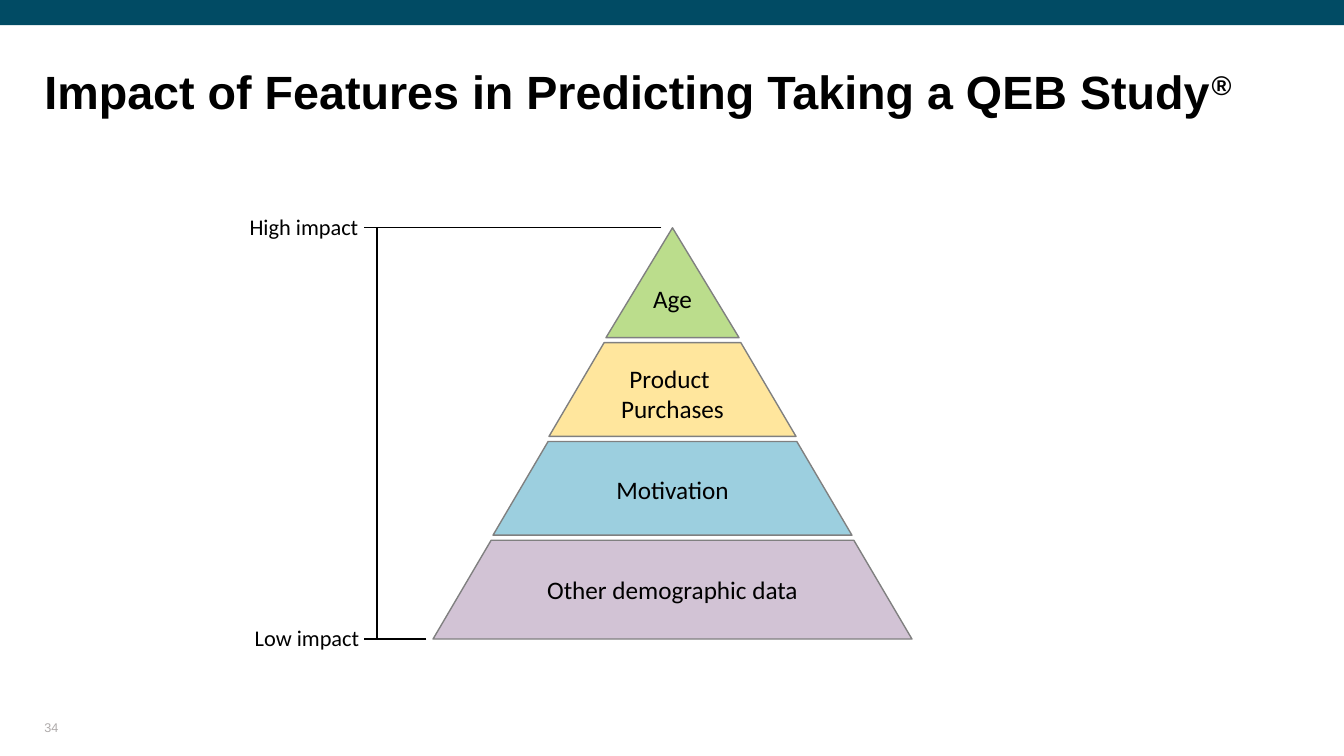
from dataclasses import dataclass

from lxml.etree import SubElement
from pptx import Presentation
from pptx.dml.color import RGBColor as Rgb
from pptx.enum.shapes import MSO_CONNECTOR as Link, MSO_SHAPE as Kind
from pptx.enum.text import MSO_ANCHOR as Anchor, MSO_AUTO_SIZE as Fit, PP_ALIGN as Align
from pptx.oxml.ns import qn
from pptx.util import Inches, Pt


@dataclass(frozen=True)
class Theme:
    head: str = "Arial"
    body: str = "Calibri"
    ink: str = "000000"
    edge: str = "808080"
    band: str = "014B64"
    mute: str = "AFABAB"
    green: str = "BBDD8C"
    gold: str = "FFE69D"
    blue: str = "9CCFDF"
    mauve: str = "D2C3D5"
    title: float = 33.3
    tier: int = 18
    label: int = 16
    page: int = 9
    rule: int = 1


class Deck:
    def __init__(self, theme):
        self.theme = theme
        self.file = Presentation()
        self.file.slide_width = Inches(13.33)
        self.file.slide_height = Inches(7.5)
        self.slide = self.file.slides.add_slide(self.file.slide_layouts[5])
        self.items = self.slide.shapes

    def style(self, run, size, face, color, bold=False):
        font = run.font
        font.size, font.name, font.bold = Pt(size), face, bold
        font.color.rgb = Rgb.from_string(color)

    def flush(self, frame):
        frame.margin_left = frame.margin_right = 0
        frame.margin_top = frame.margin_bottom = 0
        frame.vertical_anchor = Anchor.BOTTOM
        frame.word_wrap = True

    def shape(self, kind, box, fill, edge=None):
        item = self.items.add_shape(kind, *map(Inches, box))
        item.shadow.inherit = False
        item.fill.solid()
        item.fill.fore_color.rgb = Rgb.from_string(fill)
        if edge:
            item.line.color.rgb = Rgb.from_string(edge)
            item.line.width = Pt(self.theme.rule)
        else:
            item.line.fill.background()
        return item

    def text(self, words, box, size):
        frame = self.items.add_textbox(*map(Inches, box)).text_frame
        frame.word_wrap = True
        frame.auto_size = Fit.SHAPE_TO_FIT_TEXT
        frame.text = words
        for para in frame.paragraphs:
            para.alignment = Align.CENTER
            self.style(para.runs[0], size, self.theme.body, self.theme.ink)

    def line(self, *ends):
        item = self.items.add_connector(Link.STRAIGHT, *map(Inches, ends))
        item.line.color.rgb = Rgb.from_string(self.theme.ink)
        item.line.width = Pt(self.theme.rule)
        SubElement(item._element.spPr, qn("a:effectLst"))

    def title(self, words, mark, box):
        item = self.items.title
        item.left, item.top, item.width, item.height = map(Inches, box)
        frame = item.text_frame
        self.flush(frame)
        frame.auto_size = Fit.NONE
        para = frame.paragraphs[0]
        para.text = words
        para.alignment = Align.LEFT
        para.line_spacing = 0.9
        sign = para.add_run()
        sign.text = mark
        for run in para.runs:
            self.style(run, self.theme.title, self.theme.head, self.theme.ink, True)
        sign.font._element.set("baseline", "30000")

    def page(self, words, box):
        frame = self.items.add_textbox(*map(Inches, box)).text_frame
        self.flush(frame)
        frame.text = words
        para = frame.paragraphs[0]
        para.space_after = Pt(6)
        self.style(para.runs[0], self.theme.page, self.theme.head, self.theme.mute)


def main():
    theme = Theme()
    deck = Deck(theme)
    deck.shape(Kind.RECTANGLE, (0, 0, 13.33, 0.25), theme.band)
    deck.title("Impact of Features in Predicting Taking a QEB Study", "®",
               (0.44, 0.46, 12.82, 0.73))
    deck.page("34", (0.44, 7.05, 3, 0.24))

    mid, peak, base, gap = 6.67, 2.26, 6.34, 0.05
    tiers = [
        ("Age", 1.32, 1.09, theme.green, 2.76, 1.69, 0.4),
        ("Product \nPurchases", 2.45, 0.93, theme.gold, 3.55, 3.66, 0.71),
        ("Motivation", 3.56, 0.93, theme.blue, 4.66, 3.66, 0.4),
        ("Other demographic data", 4.75, 0.98, theme.mauve, 5.65, 3.66, 0.4),
    ]
    top = peak
    for row, (words, wide, high, fill, y, span, tall) in enumerate(tiers):
        kind = Kind.TRAPEZOID if row else Kind.ISOSCELES_TRIANGLE
        item = deck.shape(kind, (mid - wide / 2, top, wide, high), fill, theme.edge)
        if row:
            item.adjustments[0] = 0.588
        deck.text(words, (mid - span / 2, y, span, tall), theme.tier)
        top += high + gap

    axis, tick = 3.74, 3.61
    deck.line(axis, peak, axis, base)
    for words, x, y, end, level in [
        ("High impact", 1.73, 2.07, 6.56, peak),
        ("Low impact", 1.76, 6.14, 4.23, base),
    ]:
        deck.line(end, level, tick, level)
        deck.text(words, (x, y, 2.57, 0.37), theme.label)

    deck.file.save("out.pptx")


if __name__ == "__main__":
    main()
